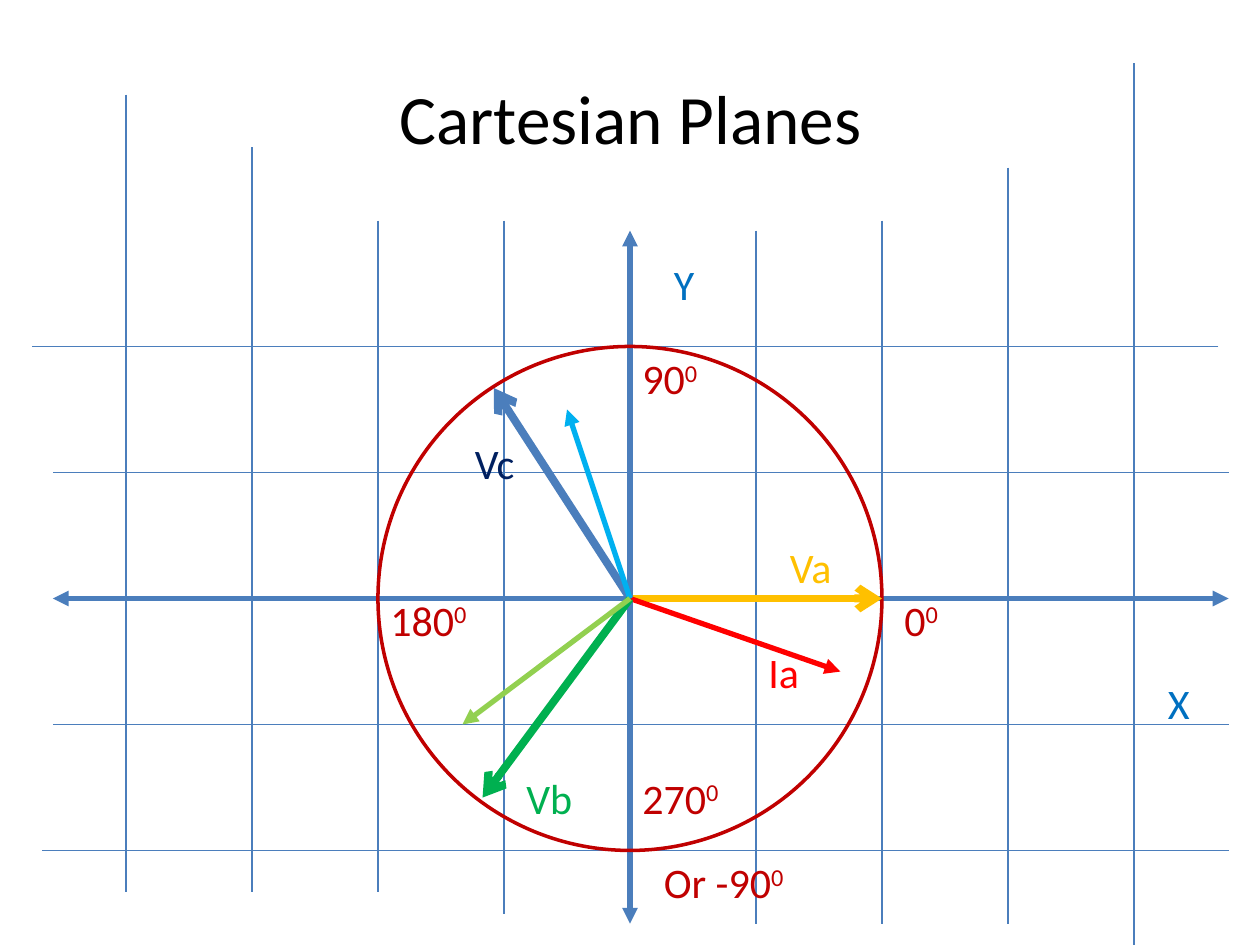
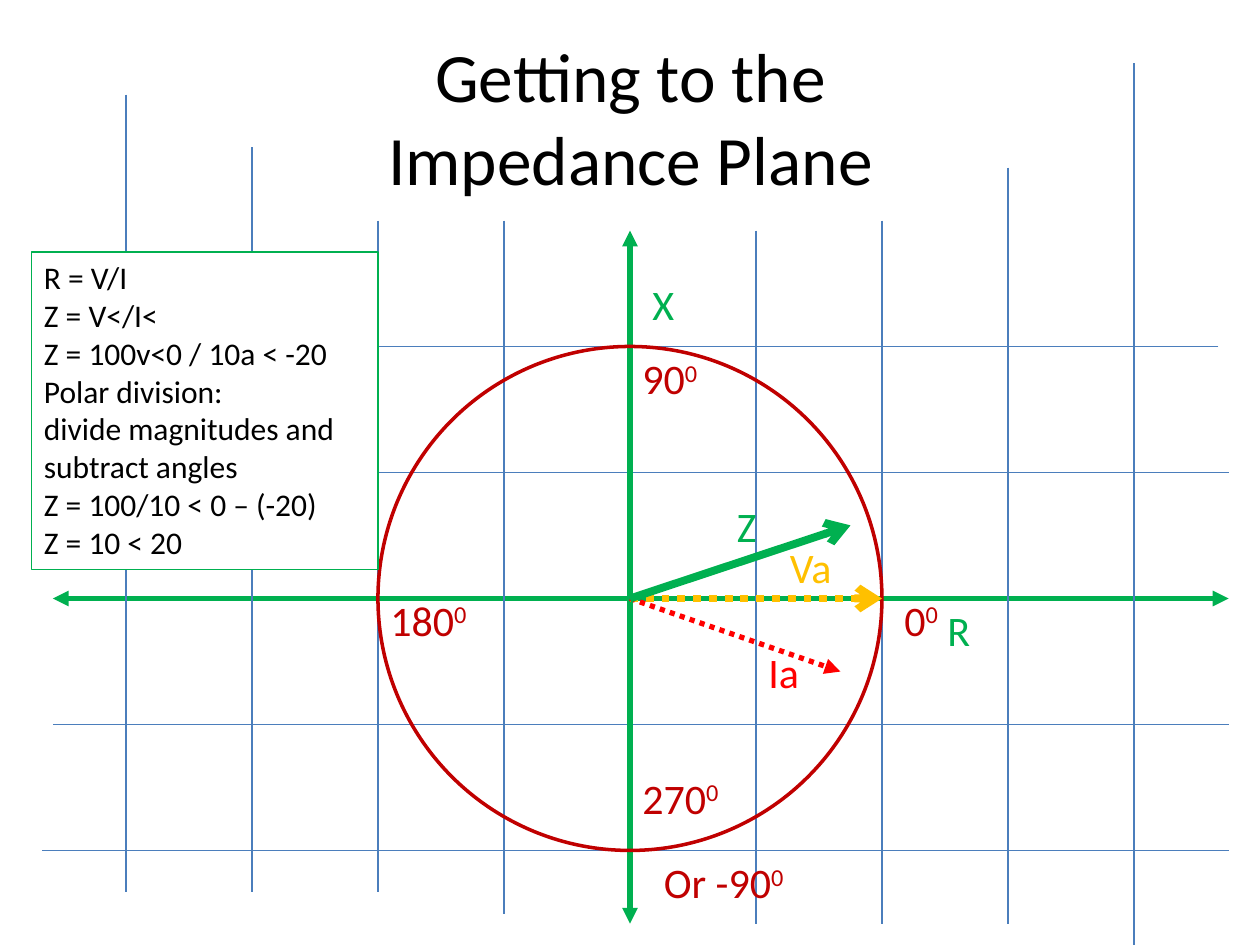
from dataclasses import dataclass

from pptx import Presentation
from pptx.dml.color import RGBColor
from pptx.enum.dml import MSO_LINE
from pptx.enum.shapes import MSO_CONNECTOR, MSO_SHAPE
from pptx.enum.text import MSO_ANCHOR, MSO_AUTO_SIZE, PP_ALIGN
from pptx.oxml.ns import qn
from pptx.util import Cm, Pt
from lxml.etree import SubElement

UNIT_CM = 2.54  # one square of the plane
ORIGIN = (5, 4.75)
RADIUS = 2

# Left and right ends of the grid rows, from the top row down
ROW_ENDS = [(0.25, 9.67), (0.42, 9.75), (0.42, 9.75), (0.42, 9.75), (0.33, 9.75)]
# Top and bottom ends of the grid columns, from left to right
COLUMN_ENDS = [(0.75, 7.08), (1.17, 7.08), (1.75, 7.08), (1.75, 7.25), (1.83, 7.33),
               (1.83, 7.33), (1.75, 7.33), (1.33, 7.33), (0.5, 7.5)]

ANGLE_LABELS = [("0", 7.08, 4.67, 0.67), ("270", 5, 6.08, 0.83), ("180", 3, 4.67, 0.83),
                ("90", 5, 2.75, 0.67), ("Or -90", 5.17, 6.75, 1.25)]

IMPEDANCE_STEPS = [
    "R = V/I",
    "Z = V</I<",
    "Z = 100v<0 / 10a < -20",
    "Polar division:",
    "divide magnitudes and subtract angles",
    "Z = 100/10 < 0 – (-20)",
    "Z = 10 < 20",
]


@dataclass(frozen=True)
class Theme:
    font: str = "Calibri"
    black: str = "000000"
    white: str = "FFFFFF"
    steel: str = "4B7EBC"
    blue: str = "0070C0"
    sky: str = "00B0F0"
    navy: str = "002060"
    green: str = "00B050"
    lime: str = "92D050"
    amber: str = "FFC000"
    red: str = "FF0000"
    crimson: str = "C00000"
    title_size: float = 39.6
    label_size: float = 24
    note_size: float = 18
    grid_width: float = 0.75
    border_width: float = 1
    circle_width: float = 2
    axis_width: float = 3
    voltage_width: float = 4.5


THEME = Theme()


def units(*lengths):
    return [Cm(length * UNIT_CM) for length in lengths]


class PlaneDeck:
    def __init__(self, theme):
        self.theme = theme
        self.deck = Presentation()
        self.deck.slide_width, self.deck.slide_height = units(10, 7.5)
        self.page = None

    def new_page(self, title):
        self.page = self.deck.slides.add_slide(self.deck.slide_layouts[6])
        box = self.text_box(2.92, 0.3, 4.17, 1.25)
        box.text_frame.auto_size = MSO_AUTO_SIZE.NONE
        box.text_frame.vertical_anchor = MSO_ANCHOR.MIDDLE
        para = box.text_frame.paragraphs[0]
        para.alignment = PP_ALIGN.CENTER
        self.span(para, title, self.theme.title_size, self.theme.black)

    def text_box(self, left, top, width, height):
        box = self.page.shapes.add_textbox(*units(left, top, width, height))
        box.text_frame.word_wrap = True
        box.text_frame.auto_size = MSO_AUTO_SIZE.SHAPE_TO_FIT_TEXT
        return box

    def span(self, para, text, size, color, raised=False):
        span = para.add_run()
        span.text = text
        span.font.name = self.theme.font
        span.font.size = Pt(size)
        span.font.color.rgb = RGBColor.from_string(color)
        if raised:
            span.font._element.set("baseline", "30000")

    def label(self, text, left, top, width, color, degrees=False):
        para = self.text_box(left, top, width, 0.5).text_frame.paragraphs[0]
        self.span(para, text, self.theme.label_size, color)
        if degrees:
            self.span(para, "0", self.theme.label_size, color, raised=True)

    def line(self, start, end, color, width, head=None, tail=None, dotted=False):
        line = self.page.shapes.add_connector(MSO_CONNECTOR.STRAIGHT, *units(*start, *end))
        line.line.color.rgb = RGBColor.from_string(color)
        line.line.width = Pt(width)
        if dotted:
            line.line.dash_style = MSO_LINE.ROUND_DOT
        outline = line.line._get_or_add_ln()
        for tag, arrow in (("a:headEnd", head), ("a:tailEnd", tail)):
            if arrow:
                SubElement(outline, qn(tag), type=arrow)
        SubElement(line._element.spPr, qn("a:effectLst"))

    def phasor(self, right, up, color, dotted=False, voltage=False):
        """Arrow from the origin; voltages are thicker, with an open head."""
        end = (ORIGIN[0] + right, ORIGIN[1] - up)
        width = self.theme.voltage_width if voltage else self.theme.axis_width
        self.line(ORIGIN, end, color, width, tail="arrow" if voltage else "triangle",
                  dotted=dotted)

    def grid_line(self, start, end, is_axis, axis_color):
        if is_axis:
            self.line(start, end, axis_color, self.theme.axis_width, "triangle", "triangle")
        else:
            self.line(start, end, self.theme.steel, self.theme.grid_width)

    def plane(self, axis_color):
        first_row = ORIGIN[1] - len(ROW_ENDS) // 2
        for index, (left, right) in enumerate(ROW_ENDS):
            y = first_row + index
            self.grid_line((right, y), (left, y), y == ORIGIN[1], axis_color)
        for x, (top, bottom) in enumerate(COLUMN_ENDS, start=1):
            self.grid_line((x, top), (x, bottom), x == ORIGIN[0], axis_color)

    def unit_circle(self):
        circle = self.page.shapes.add_shape(
            MSO_SHAPE.OVAL,
            *units(ORIGIN[0] - RADIUS, ORIGIN[1] - RADIUS, 2 * RADIUS, 2 * RADIUS))
        circle.shadow.inherit = False
        circle.fill.background()
        circle.line.color.rgb = RGBColor.from_string(self.theme.crimson)
        circle.line.width = Pt(self.theme.circle_width)
        for text, left, top, width in ANGLE_LABELS:
            self.label(text, left, top, width, self.theme.crimson, degrees=True)

    def phase_a(self, dotted=False):
        self.phasor(RADIUS, 0, self.theme.amber, dotted, voltage=True)
        self.label("Va", 6.17, 4.25, 0.67, self.theme.amber)
        self.phasor(1.67, -0.58, self.theme.red, dotted)
        self.label("Ia", 6, 5.08, 0.5, self.theme.red)

    def note(self, lines, left, top, width, height):
        box = self.text_box(left, top, width, height)
        box.fill.solid()
        box.fill.fore_color.rgb = RGBColor.from_string(self.theme.white)
        box.line.color.rgb = RGBColor.from_string(self.theme.green)
        box.line.width = Pt(self.theme.border_width)
        frame = box.text_frame
        for index, text in enumerate(lines):
            para = frame.add_paragraph() if index else frame.paragraphs[0]
            self.span(para, text, self.theme.note_size, self.theme.black)


def cartesian_page(plane_deck):
    plane_deck.new_page("Cartesian Planes")
    plane_deck.plane(THEME.steel)
    plane_deck.label("X", 9.17, 5.33, 0.42, THEME.blue)
    plane_deck.label("Y", 5.25, 2, 0.42, THEME.blue)
    plane_deck.unit_circle()
    plane_deck.phase_a()
    plane_deck.phasor(-1.08, 1.67, THEME.steel, voltage=True)
    plane_deck.phasor(-1.17, -1.58, THEME.green, voltage=True)
    plane_deck.phasor(-0.5, 1.5, THEME.sky)
    plane_deck.phasor(-1.33, -1, THEME.lime)
    plane_deck.label("Vc", 3.67, 3.42, 0.58, THEME.navy)
    plane_deck.label("Vb", 4.08, 6.08, 0.67, THEME.green)


def impedance_page(plane_deck):
    plane_deck.new_page("Getting to the Impedance Plane")
    plane_deck.plane(THEME.green)
    plane_deck.label("R", 7.42, 4.75, 0.42, THEME.green)
    plane_deck.label("X", 5.08, 2.16, 0.42, THEME.green)
    plane_deck.unit_circle()
    plane_deck.phase_a(dotted=True)
    plane_deck.note(IMPEDANCE_STEPS, 0.25, 2, 2.75, 2.52)
    plane_deck.phasor(1.75, 0.58, THEME.green, voltage=True)
    plane_deck.label("Z", 5.75, 3.92, 0.42, THEME.green)


def main():
    plane_deck = PlaneDeck(THEME)
    cartesian_page(plane_deck)
    impedance_page(plane_deck)
    plane_deck.deck.save("out.pptx")


if __name__ == "__main__":
    main()
